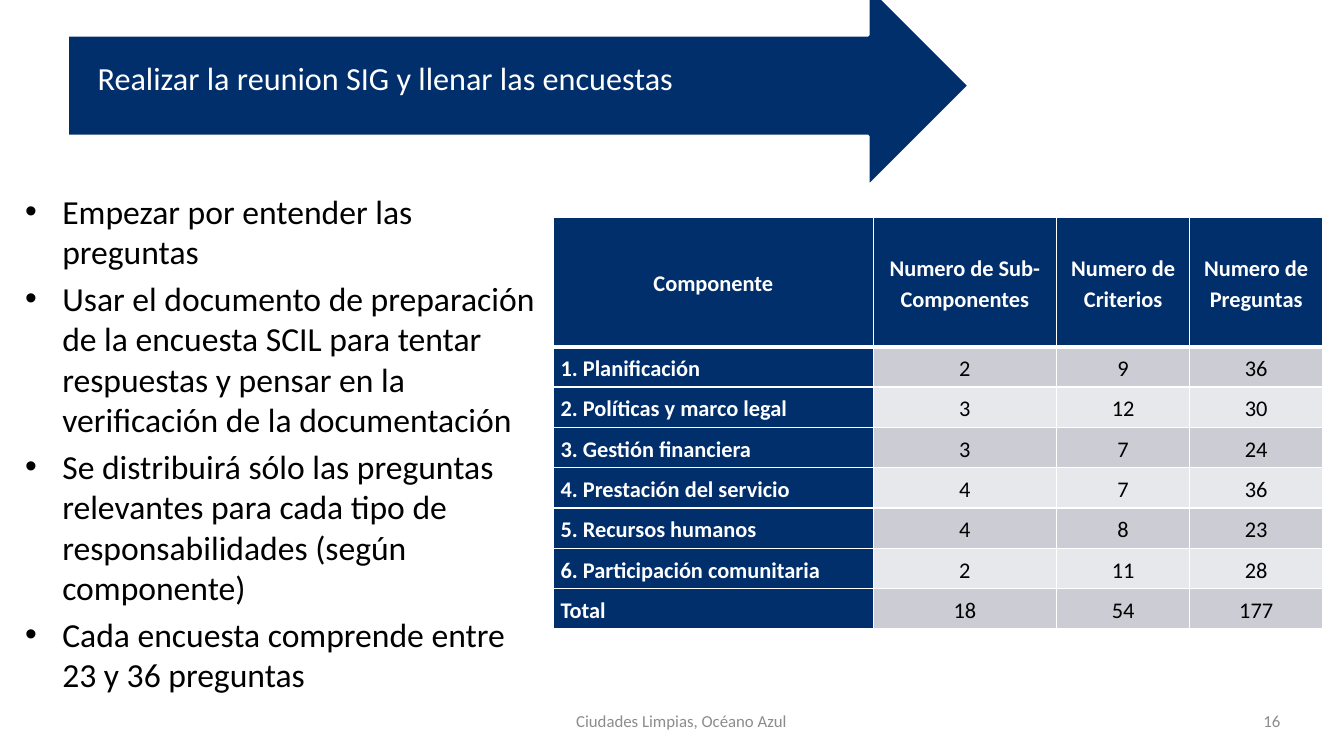
import pptx
import pptx.util
import pptx.dml.color
import pptx.enum.shapes
import pptx.enum.text
import pptx.oxml
import pptx.oxml.ns
from lxml import etree

Inches = pptx.util.Inches
Pt = pptx.util.Pt
RGBColor = pptx.dml.color.RGBColor
Align = pptx.enum.text.PP_ALIGN
Anchor = pptx.enum.text.MSO_ANCHOR

NAVY = RGBColor(0x00, 0x2F, 0x6C)
WHITE = RGBColor(0xFF, 0xFF, 0xFF)
BLACK = RGBColor(0x00, 0x00, 0x00)
GRAY = RGBColor(0x8C, 0x8C, 0x8C)
BANDS = [RGBColor(0xCC, 0xCD, 0xD4), RGBColor(0xE7, 0xE8, 0xEB)]

TITLE = "Realizar la reunion SIG y llenar las encuestas"
POINTS = [
    "Empezar por entender las preguntas",
    "Usar el documento de preparación de la encuesta SCIL para tentar "
    "respuestas y pensar en la verificación de la documentación",
    "Se distribuirá sólo las preguntas relevantes para cada tipo de "
    "responsabilidades (según componente)",
    "Cada encuesta comprende entre 23 y 36 preguntas",
]
ROWS = [
    ("Componente", "Numero de Sub-Componentes", "Numero de Criterios", "Numero de Preguntas"),
    ("1. Planificación", 2, 9, 36),
    ("2. Políticas y marco legal", 3, 12, 30),
    ("3. Gestión financiera", 3, 7, 24),
    ("4. Prestación del servicio", 4, 7, 36),
    ("5. Recursos humanos", 4, 8, 23),
    ("6. Participación comunitaria", 2, 11, 28),
    ("Total", 18, 54, 177),
]
WIDTHS = [3.17, 1.82, 1.32, 1.32]
HEAD, ROW = 1.28, 0.4
FOOTER = [
    ("Ciudades Limpias, Océano Azul", (2.86, 6.95, 7.8, 0.4)),
    ("16", (12.2, 6.95, 0.83, 0.4)),
]


def style(item, values):
    for name, value in values.items():
        setattr(item, name, value)


def write(para, text, size, color, bold=False, **form):
    para.text = str(text)
    style(para, form)
    style(para.font, {"name": "Calibri", "size": Pt(size), "bold": bold})
    para.font.color.rgb = color


def add_box(shapes, place, **form):
    frame = shapes.add_textbox(*map(Inches, place)).text_frame
    style(frame, {"word_wrap": True, **form})
    return frame


def add_bullet(para):
    props = para._p.get_or_add_pPr()
    props.set("marL", str(Inches(0.37)))
    props.set("indent", str(-Inches(0.37)))
    tag = pptx.oxml.ns.qn
    etree.SubElement(props, tag("a:buFont")).set("typeface", "Arial")
    etree.SubElement(props, tag("a:buChar")).set("char", "•")


def add_edge(cell, side, width):
    cell._tc.get_or_add_tcPr().append(pptx.oxml.parse_xml(
        f'<a:ln{side} {pptx.oxml.ns.nsdecls("a")} w="{Pt(width)}">'
        f'<a:solidFill><a:srgbClr val="{WHITE}"/></a:solidFill></a:ln{side}>'))


def add_points(slide):
    frame = add_box(slide.shapes, (0.15, 1.84, 5.33, 5.08))
    for i, text in enumerate(POINTS):
        para = frame.add_paragraph() if i else frame.paragraphs[0]
        add_bullet(para)
        write(para, text, 24, BLACK, space_before=Pt(4.8 if i else 0))


def add_title(slide):
    group = slide.shapes.add_group_shape()
    kind = pptx.enum.shapes.MSO_SHAPE.RIGHT_ARROW
    arrow = group.shapes.add_shape(kind, *map(Inches, (0.67, -0.15, 8.94, 2)))
    arrow.shadow.inherit = False
    arrow.fill.solid()
    arrow.fill.fore_color.rgb = NAVY
    arrow.line.color.rgb = WHITE
    arrow.line.width = Pt(2)
    frame = add_box(group.shapes, (0.87, 0.35, 8.44, 1),
                    vertical_anchor=Anchor.MIDDLE,
                    margin_left=Inches(0.1), margin_top=Inches(0.1),
                    margin_right=Inches(0.28), margin_bottom=Inches(0.21))
    write(frame.paragraphs[0], TITLE, 23, WHITE, line_spacing=0.9)


def add_grid(slide):
    high = HEAD + ROW * (len(ROWS) - 1)
    place = map(Inches, (5.49, 2.16, sum(WIDTHS), high))
    table = slide.shapes.add_table(len(ROWS), len(WIDTHS), *place).table
    for col, width in zip(table.columns, WIDTHS):
        col.width = Inches(width)
    for r, row in enumerate(ROWS):
        table.rows[r].height = Inches(ROW if r else HEAD)
        for c, text in enumerate(row):
            cell = table.cell(r, c)
            label = r == 0 or c == 0
            style(cell, {"vertical_anchor": Anchor.MIDDLE,
                         "margin_left": Inches(0.07), "margin_right": Inches(0.07),
                         "margin_top": 0, "margin_bottom": 0})
            thick = {"T": r == 1, "B": r == 0}
            for side in "LRTB":
                add_edge(cell, side, 3 if thick.get(side) else 1)
            cell.fill.solid()
            cell.fill.fore_color.rgb = NAVY if label else BANDS[(r - 1) % 2]
            write(cell.text_frame.paragraphs[0], text, 16,
                  WHITE if label else BLACK, label,
                  alignment=Align.LEFT if r and c == 0 else Align.CENTER,
                  line_spacing=1.15, space_after=Pt(6))


def main():
    deck = pptx.Presentation()
    style(deck, {"slide_width": Inches(13.33), "slide_height": Inches(7.5)})
    slide = deck.slides.add_slide(deck.slide_layouts[6])
    add_points(slide)
    add_title(slide)
    add_grid(slide)
    for text, place in FOOTER:
        frame = add_box(slide.shapes, place, vertical_anchor=Anchor.MIDDLE)
        write(frame.paragraphs[0], text, 12, GRAY, alignment=Align.CENTER)
    deck.save("out.pptx")


if __name__ == "__main__":
    main()
